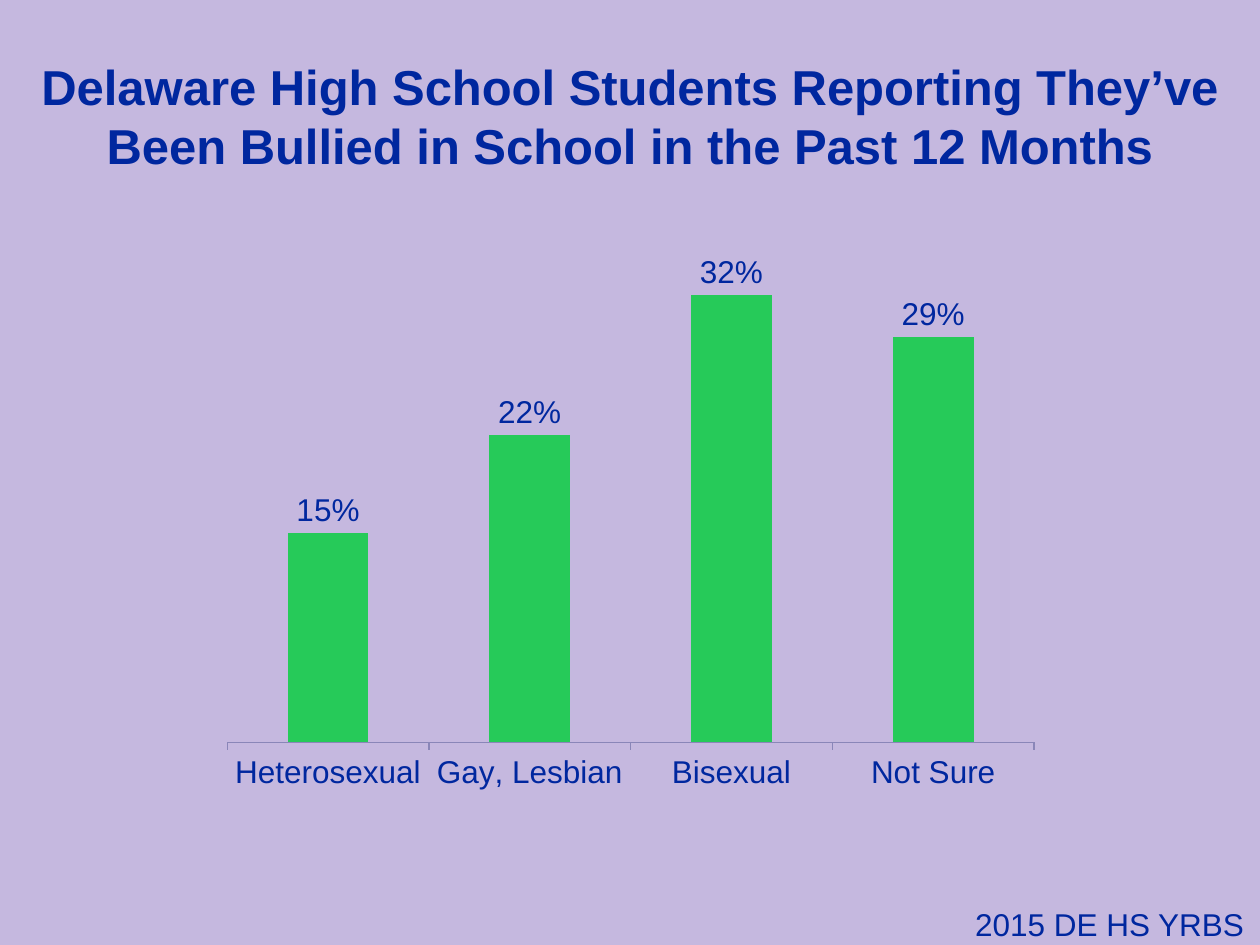
from dataclasses import dataclass

from pptx import Presentation
from pptx.chart.data import CategoryChartData
from pptx.dml.color import RGBColor
from pptx.enum.chart import XL_CHART_TYPE, XL_LABEL_POSITION, XL_TICK_MARK
from pptx.enum.text import MSO_ANCHOR, PP_ALIGN
from pptx.util import Inches, Pt


@dataclass(frozen=True)
class Theme:
    background = RGBColor.from_string("C5B8DF")
    text = RGBColor.from_string("00279F")
    bar = RGBColor.from_string("26CA59")
    axis = RGBColor.from_string("8A86B8")
    font = "Arial"
    title_size = Pt(28)
    body_size = Pt(18)


theme = Theme()


def style_font(font, size, bold=False):
    font.name = theme.font
    font.size = size
    font.bold = bold
    font.color.rgb = theme.text


def add_text(s, text, left, top, width, height, size, align, wrap=True, bold=False):
    tf = s.shapes.add_textbox(Inches(left), Inches(top), Inches(width), Inches(height)).text_frame
    tf.word_wrap = wrap
    tf.vertical_anchor = MSO_ANCHOR.MIDDLE
    p = tf.paragraphs[0]
    p.text = text
    p.alignment = align
    style_font(p.font, size, bold)


prs = Presentation()
prs.slide_width = Inches(10)
prs.slide_height = Inches(7.5)
s = prs.slides.add_slide(prs.slide_layouts[6])
s.background.fill.solid()
s.background.fill.fore_color.rgb = theme.background

add_text(s, "Delaware High School Students Reporting They’ve Been Bullied in School in the Past 12 Months",
         0, 0.31, 10, 1.21, theme.title_size, PP_ALIGN.CENTER, bold=True)

data = CategoryChartData(number_format="0%")
data.categories = ["Heterosexual", "Gay, Lesbian", "Bisexual", "Not Sure"]
data.add_series("Series 1", [0.15, 0.22, 0.32, 0.29])
chart = s.shapes.add_chart(XL_CHART_TYPE.COLUMN_CLUSTERED, Inches(1.67), Inches(1.92),
                           Inches(6.67), Inches(4.44), data).chart
chart.has_legend = False
chart.has_title = False
style_font(chart.font, theme.body_size)

value_axis = chart.value_axis
value_axis.visible = False
value_axis.has_major_gridlines = False
value_axis.minimum_scale = 0
value_axis.maximum_scale = 0.35

category_axis = chart.category_axis
category_axis.major_tick_mark = XL_TICK_MARK.OUTSIDE
category_axis.format.line.color.rgb = theme.axis
category_axis.format.line.width = Pt(0.75)

plot = chart.plots[0]
plot.gap_width = 150
plot.vary_by_categories = False
fill = plot.series[0].format.fill
fill.solid()
fill.fore_color.rgb = theme.bar

plot.has_data_labels = True
labels = plot.data_labels
labels.show_value = True
labels.number_format = "0%"
labels.number_format_is_linked = False
labels.position = XL_LABEL_POSITION.OUTSIDE_END
style_font(labels.font, theme.body_size)

add_text(s, "2015 DE HS YRBS", 7.64, 7.13, 2.36, 0.4, theme.body_size, PP_ALIGN.LEFT, wrap=False)

prs.save("out.pptx")
